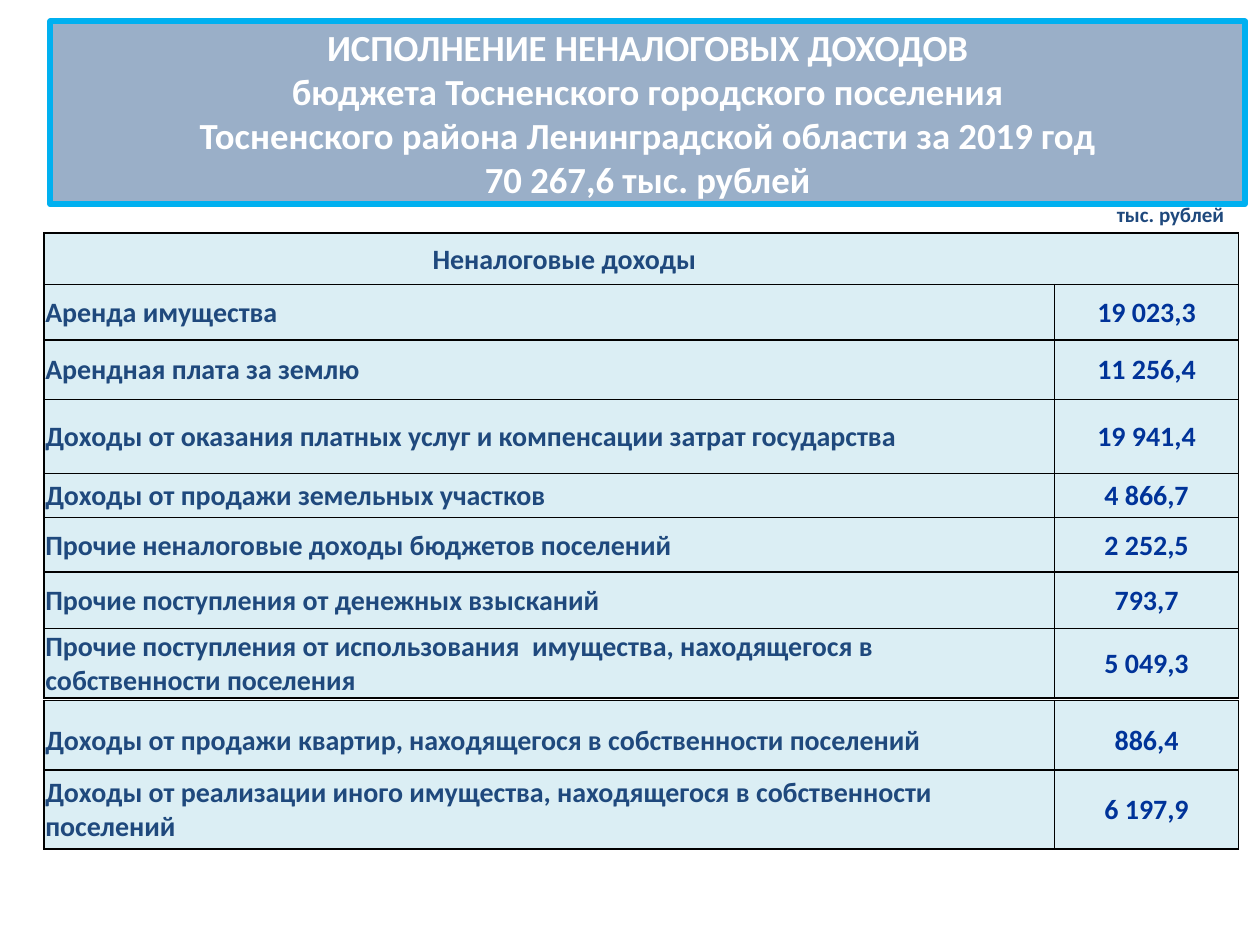
from dataclasses import dataclass

from lxml.etree import SubElement
from pptx import Presentation
from pptx.dml.color import RGBColor as Rgb
from pptx.enum.shapes import MSO_SHAPE as Shape
from pptx.enum.text import MSO_ANCHOR as Anchor, PP_ALIGN as Align
from pptx.oxml.ns import qn
from pptx.util import Inches, Pt

NAVY, BLUE, PALE, WHITE = "1F497D", "003399", "DBEEF4", "FFFFFF"
LEFT, WIDE = 0.35, 9.48
COLS = (8.02, 1.46)


@dataclass
class Row:
    label: str
    value: str
    height: float


@dataclass
class Grid:
    top: float
    rows: list[Row]


HEAD = "Неналоговые доходы"
GRIDS = [
    Grid(1.85, [
        Row(HEAD, "", 0.41),
        Row("Аренда имущества", "19 023,3", 0.44),
        Row("Арендная плата за землю", "11 256,4", 0.47),
        Row("Доходы от оказания платных услуг и компенсации затрат государства", "19 941,4", 0.59),
        Row("Доходы от продажи земельных участков", "4 866,7", 0.35),
        Row("Прочие неналоговые доходы бюджетов поселений", "2 252,5", 0.43),
        Row("Прочие поступления от денежных взысканий", "793,7", 0.45),
        Row("Прочие поступления от использования  имущества, находящегося в собственности поселения",
            "5 049,3", 0.55),
    ]),
    Grid(5.56, [
        Row("Доходы от продажи квартир, находящегося в собственности поселений", "886,4", 0.63),
    ]),
    Grid(6.11, [
        Row("Доходы от реализации иного имущества, находящегося в собственности поселений",
            "6 197,9", 0.63),
    ]),
]
TITLE = "\v".join([
    "ИСПОЛНЕНИЕ НЕНАЛОГОВЫХ ДОХОДОВ",
    "бюджета Тосненского городского поселения",
    "Тосненского района Ленинградской области за 2019 год",
    "70 267,6 тыс. рублей",
])


def paint(color, tone: str) -> None:
    color.rgb = Rgb.from_string(tone)


def write(frame, text: str, size: float, tone: str, align=Align.CENTER) -> None:
    frame.text = text
    for para in frame.paragraphs:
        para.alignment = align
        for run in para.runs:
            run.font.name = "Calibri"
            run.font.size = Pt(size)
            run.font.bold = True
            paint(run.font.color, tone)


def frame_cell(cell) -> None:
    props = cell._tc.get_or_add_tcPr()
    for side in ("lnL", "lnR", "lnT", "lnB"):
        line = SubElement(props, qn(f"a:{side}"), w=str(Pt(1)))
        fill = SubElement(line, qn("a:solidFill"))
        SubElement(fill, qn("a:srgbClr"), val="000000")
    cell.fill.solid()
    paint(cell.fill.fore_color, PALE)


def fill_cell(cell, text: str, tone: str, align) -> None:
    frame_cell(cell)
    cell.vertical_anchor = Anchor.MIDDLE
    cell.margin_left = cell.margin_right = cell.margin_top = Inches(0.01)
    cell.margin_bottom = 0
    write(cell.text_frame, text, 16, tone, align)


def draw_grid(slide, grid: Grid) -> None:
    total = sum(row.height for row in grid.rows)
    table = slide.shapes.add_table(
        len(grid.rows), len(COLS), Inches(LEFT), Inches(grid.top), Inches(WIDE), Inches(total)
    ).table
    table.first_row = table.horz_banding = False
    for col, width in zip(table.columns, COLS):
        col.width = Inches(width)
    for i, row in enumerate(grid.rows):
        table.rows[i].height = Inches(row.height)
        label, value = table.cell(i, 0), table.cell(i, 1)
        if row.value:
            fill_cell(label, row.label, NAVY, Align.LEFT)
            fill_cell(value, row.value, BLUE, Align.CENTER)
        else:
            label.merge(value)
            frame_cell(value)
            fill_cell(label, row.label, NAVY, Align.CENTER)
            label.margin_right = Inches(1.23)


def draw_title(slide) -> None:
    box = slide.shapes.add_shape(
        Shape.RECTANGLE, Inches(0.4), Inches(0.17), Inches(WIDE), Inches(1.45))
    box.shadow.inherit = False
    box.fill.solid()
    paint(box.fill.fore_color, "376092")
    tint = box._element.spPr.find(qn("a:solidFill")).find(qn("a:srgbClr"))
    SubElement(tint, qn("a:alpha"), val="50000")
    paint(box.line.color, "00B0F0")
    box.line.width = Pt(3.5)
    box.text_frame.word_wrap = True
    box.text_frame.vertical_anchor = Anchor.MIDDLE
    write(box.text_frame, TITLE, 21, WHITE)


def draw_unit(slide) -> None:
    box = slide.shapes.add_textbox(Inches(8.58), Inches(1.55), Inches(1.42), Inches(0.3))
    box.text_frame.word_wrap = True
    write(box.text_frame, "тыс. рублей", 12, NAVY)


def main() -> None:
    deck = Presentation()
    deck.slide_width, deck.slide_height = Inches(10), Inches(7.5)
    slide = deck.slides.add_slide(deck.slide_layouts[6])
    draw_title(slide)
    draw_unit(slide)
    for grid in GRIDS:
        draw_grid(slide, grid)
    deck.save("out.pptx")


if __name__ == "__main__":
    main()
